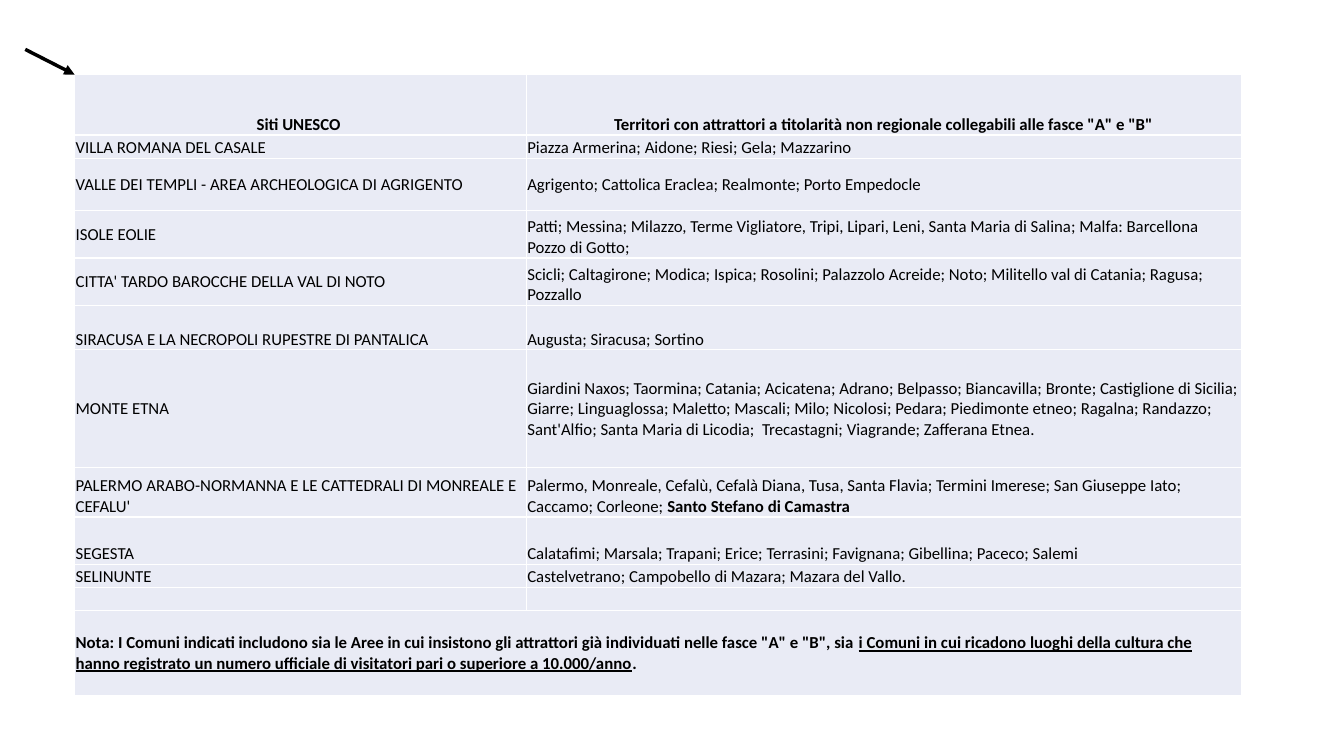
from lxml.etree import SubElement
from pptx import Presentation
from pptx.dml.color import RGBColor as RGB
from pptx.enum.shapes import MSO_CONNECTOR
from pptx.enum.text import MSO_ANCHOR as ANCHOR, PP_ALIGN as ALIGN
from pptx.oxml import parse_xml
from pptx.oxml.ns import nsdecls, qn
from pptx.util import Inches, Pt

THEME = {"font": "Calibri", "size": 12, "text": "000000", "cell": "E9EBF5",
         "border": "FFFFFF", "border_pt": 1, "arrow": "000000", "arrow_pt": 2.5}
BOTTOM, MIDDLE = ANCHOR.BOTTOM, ANCHOR.MIDDLE

HEADINGS = ("Siti UNESCO ",
            'Territori con attrattori a titolarità non regionale collegabili alle fasce "A" e "B"')
# Row height, site and its anchor, territories and their anchor, closing words in bold
SITES = [
    (0.23, "VILLA ROMANA DEL CASALE", BOTTOM,
     "Piazza Armerina; Aidone; Riesi; Gela; Mazzarino", BOTTOM, ""),
    (0.52, "VALLE DEI TEMPLI - AREA ARCHEOLOGICA DI AGRIGENTO", MIDDLE,
     "Agrigento; Cattolica Eraclea; Realmonte; Porto Empedocle", MIDDLE, ""),
    (0.47, "ISOLE EOLIE", MIDDLE,
     "Patti; Messina; Milazzo, Terme Vigliatore, Tripi, Lipari, Leni, Santa Maria di Salina; "
     "Malfa: Barcellona Pozzo di Gotto;", BOTTOM, ""),
    (0.47, "CITTA' TARDO BAROCCHE DELLA VAL DI NOTO", MIDDLE,
     "Scicli; Caltagirone; Modica; Ispica; Rosolini; Palazzolo Acreide; Noto; "
     "Militello val di Catania; Ragusa; Pozzallo", BOTTOM, ""),
    (0.44, "SIRACUSA E LA NECROPOLI RUPESTRE DI PANTALICA", BOTTOM,
     "Augusta; Siracusa; Sortino", BOTTOM, ""),
    (1.17, "MONTE ETNA", MIDDLE,
     "Giardini Naxos; Taormina; Catania; Acicatena; Adrano; Belpasso; Biancavilla; Bronte; "
     "Castiglione di Sicilia; Giarre; Linguaglossa; Maletto; Mascali; Milo; Nicolosi; Pedara; "
     "Piedimonte etneo; Ragalna; Randazzo; Sant'Alfio; Santa Maria di Licodia;  Trecastagni; "
     "Viagrande; Zafferana Etnea.", MIDDLE, ""),
    (0.49, "PALERMO ARABO-NORMANNA E LE CATTEDRALI DI MONREALE E CEFALU'", BOTTOM,
     "Palermo, Monreale, Cefalù, Cefalà Diana, Tusa, Santa Flavia; Termini Imerese; "
     "San Giuseppe Iato; Caccamo; Corleone; ", BOTTOM, "Santo Stefano di Camastra"),
    (0.47, "SEGESTA", BOTTOM,
     "Calatafimi; Marsala; Trapani; Erice; Terrasini; Favignana; Gibellina; Paceco; Salemi",
     BOTTOM, ""),
    (0.23, "SELINUNTE", BOTTOM,
     "Castelvetrano; Campobello di Mazara; Mazara del Vallo.", BOTTOM, ""),
]
NOTE = [
    ("Nota: I Comuni indicati includono sia le Aree in cui insistono gli attrattori già "
     'individuati nelle fasce "A" e "B", sia ', "b"),
    ("i Comuni in cui ricadono luoghi della cultura che hanno registrato un numero ufficiale "
     "di visitatori pari o superiore a 10.000/anno", "bu"),
    (".", "b"),
]
HEADING_HEIGHT, GAP_HEIGHT, NOTE_HEIGHT = 0.6, 0.23, 0.84
COLUMNS = (4.48, 7.09)
TABLE_LEFT = TABLE_TOP = 0.74
ARROW_START = (0.25, 0.49)


def style_cell(cell):
    cell.margin_left = cell.margin_right = cell.margin_top = Inches(0.01)
    cell.margin_bottom = 0
    cell.fill.solid()
    cell.fill.fore_color.rgb = RGB.from_string(THEME["cell"])
    properties = cell._tc.get_or_add_tcPr()
    for position, side in enumerate(("lnL", "lnR", "lnT", "lnB")):
        properties.insert(position, parse_xml(
            f'<a:{side} {nsdecls("a")} w="{Pt(THEME["border_pt"])}"><a:solidFill>'
            f'<a:srgbClr val="{THEME["border"]}"/></a:solidFill></a:{side}>'))


def write_cell(cell, parts, anchor, align=ALIGN.LEFT):
    """Fill a cell with (text, style) parts; style may hold b for bold, u for underline."""
    cell.vertical_anchor = anchor
    paragraph = cell.text_frame.paragraphs[0]
    paragraph.alignment = align
    for text, style in parts:
        run = paragraph.add_run()
        run.text = text
        run.font.name = THEME["font"]
        run.font.size = Pt(THEME["size"])
        run.font.color.rgb = RGB.from_string(THEME["text"])
        run.font.bold = "b" in style
        run.font.underline = "u" in style


def add_sites_table(slide):
    heights = [HEADING_HEIGHT, *(site[0] for site in SITES), GAP_HEIGHT, NOTE_HEIGHT]
    table = slide.shapes.add_table(
        len(heights), len(COLUMNS), Inches(TABLE_LEFT), Inches(TABLE_TOP),
        Inches(sum(COLUMNS)), Inches(sum(heights))).table
    table.first_row = table.horz_banding = False
    for column, width in zip(table.columns, COLUMNS):
        column.width = Inches(width)
    for row, height in zip(table.rows, heights):
        row.height = Inches(height)
    for cell in table.iter_cells():
        style_cell(cell)

    for column, heading in enumerate(HEADINGS):
        write_cell(table.cell(0, column), [(heading, "b")], BOTTOM, ALIGN.CENTER)
    for row, (_, site, site_anchor, territories, anchor, closing) in enumerate(SITES, 1):
        write_cell(table.cell(row, 0), [(site, "")], site_anchor)
        parts = [(territories, "")] + ([(closing, "b")] if closing else [])
        write_cell(table.cell(row, 1), parts, anchor)

    gap_row, note_row = len(heights) - 2, len(heights) - 1
    for cell in table.rows[gap_row].cells:
        end = SubElement(cell.text_frame.paragraphs[0]._p, qn("a:endParaRPr"))
        end.set("sz", str(THEME["size"] * 100))
    note = table.cell(note_row, 0)
    note.merge(table.cell(note_row, 1))
    write_cell(note, NOTE, MIDDLE)


def add_arrow(slide, start, end):
    arrow = slide.shapes.add_connector(
        MSO_CONNECTOR.STRAIGHT, *(Inches(value) for value in (*start, *end)))
    arrow.line.color.rgb = RGB.from_string(THEME["arrow"])
    arrow.line.width = Pt(THEME["arrow_pt"])
    SubElement(arrow.line._get_or_add_ln(), qn("a:tailEnd")).set("type", "triangle")
    SubElement(arrow._element.spPr, qn("a:effectLst"))


def main():
    deck = Presentation()
    deck.slide_width, deck.slide_height = Inches(13.33), Inches(7.5)
    slide = deck.slides.add_slide(deck.slide_layouts[6])
    add_sites_table(slide)
    add_arrow(slide, ARROW_START, (TABLE_LEFT, TABLE_TOP))
    deck.save("out.pptx")


if __name__ == "__main__":
    main()
